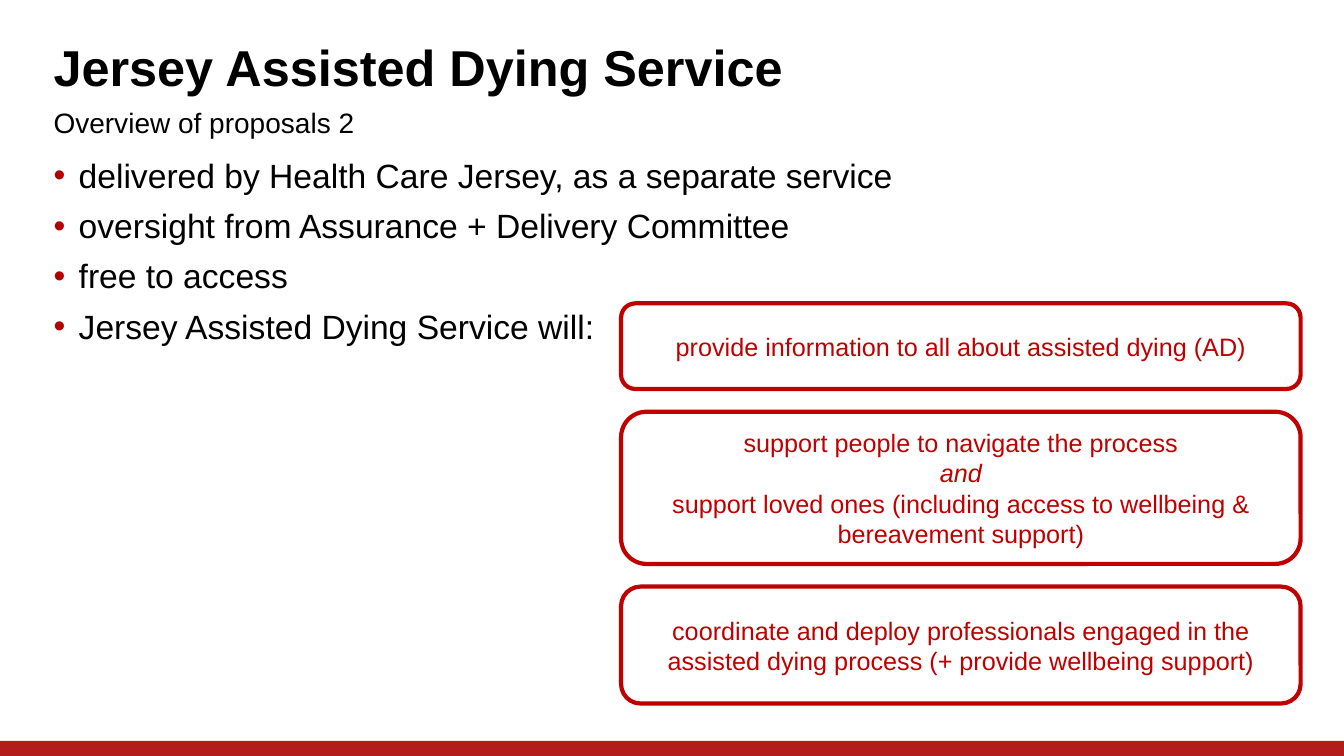
from lxml import etree
from pptx import Presentation
from pptx.dml.color import RGBColor
from pptx.enum.shapes import MSO_SHAPE
from pptx.enum.text import MSO_ANCHOR, MSO_AUTO_SIZE, PP_ALIGN
from pptx.oxml.ns import qn
from pptx.util import Inches, Pt

RECT = MSO_SHAPE.RECTANGLE
ROUND = MSO_SHAPE.ROUNDED_RECTANGLE
TOP, MIDDLE = MSO_ANCHOR.TOP, MSO_ANCHOR.MIDDLE
LEFT, CENTER = PP_ALIGN.LEFT, PP_ALIGN.CENTER
FIXED = MSO_AUTO_SIZE.NONE

THEME = {
    "font": "Arial",
    "ink": RGBColor.from_string("000000"),
    "red": RGBColor.from_string("C00000"),
    "bar": RGBColor.from_string("B21C1A"),
    "bullet": "B20000",
    "title": Pt(36),
    "sub": Pt(20),
    "list": Pt(24),
    "box": Pt(18),
    "line": Pt(3),
}

deck = Presentation()
deck.slide_width, deck.slide_height = Inches(13.33), Inches(7.5)
slide = deck.slides.add_slide(deck.slide_layouts[3])
title, sub, points = slide.placeholders


def area(left, top, width, height):
    wide, high = deck.slide_width / 100, deck.slide_height / 100
    return int(left * wide), int(top * high), int(width * wide), int(height * high)


def write(shape, lines, size, color, align, anchor, space=None, bullet=None):
    frame = shape.text_frame
    frame.word_wrap = True
    frame.auto_size = FIXED
    frame.vertical_anchor = anchor
    frame.text = "\n".join(lines)
    for rank, para in enumerate(frame.paragraphs):
        para.alignment = align
        para.line_spacing = space
        para.space_before = Pt(10 if rank and bullet else 0)
        props = para._p.get_or_add_pPr()
        if bullet:
            props.set("marL", str(Inches(0.25)))
            props.set("indent", str(-Inches(0.25)))
            tint = etree.SubElement(props, qn("a:buClr"))
            etree.SubElement(tint, qn("a:srgbClr")).set("val", bullet)
            etree.SubElement(props, qn("a:buChar")).set("char", "•")
        else:
            props.set("marL", "0")
            props.set("indent", "0")
            etree.SubElement(props, qn("a:buNone"))
        para.font.name = THEME["font"]
        para.font.size = size
        para.font.color.rgb = color
    return frame


bar = slide.shapes.add_shape(RECT, *area(0, 98, 100, 2))
bar.shadow.inherit = False
bar.fill.solid()
bar.fill.fore_color.rgb = THEME["bar"]
bar.line.fill.background()

HEADS = [
    (title, (3.23, 5.33, 89.95, 7.87), ["Jersey Assisted Dying Service"], "title", MIDDLE, None),
    (sub, (3.23, 14.4, 89.95, 4.13), ["Overview of proposals 2"], "sub", MIDDLE, None),
    (points, (3.23, 20.4, 94.45, 75.73), [
        "delivered by Health Care Jersey, as a separate service",
        "oversight from Assurance + Delivery Committee",
        "free to access",
        "Jersey Assisted Dying Service will:",
    ], "list", TOP, THEME["bullet"]),
]
for holder, place, lines, role, anchor, bullet in HEADS:
    holder.left, holder.top, holder.width, holder.height = area(*place)
    write(holder, lines, THEME[role], THEME["ink"], LEFT, anchor, 0.9, bullet)
title.text_frame.paragraphs[0].font.bold = True

DUTIES = [
    (11.33, ["provide information to all about assisted dying (AD)"]),
    (20.13, [
        "support people to navigate the process",
        "and",
        "support loved ones (including access to wellbeing & bereavement support)",
    ]),
    (15.47, [
        "coordinate and deploy professionals engaged in the assisted dying process "
        "(+ provide wellbeing support)",
    ]),
]
GAP = 3
top = 40.13
for height, lines in DUTIES:
    box = slide.shapes.add_shape(ROUND, *area(46.21, top, 50.56, height))
    box.shadow.inherit = False
    box.fill.background()
    box.line.color.rgb = THEME["red"]
    box.line.width = THEME["line"]
    frame = write(box, lines, THEME["box"], THEME["red"], CENTER, MIDDLE)
    for para in frame.paragraphs:
        para.font.italic = para.text == "and"
    top += height + GAP

deck.save("out.pptx")
